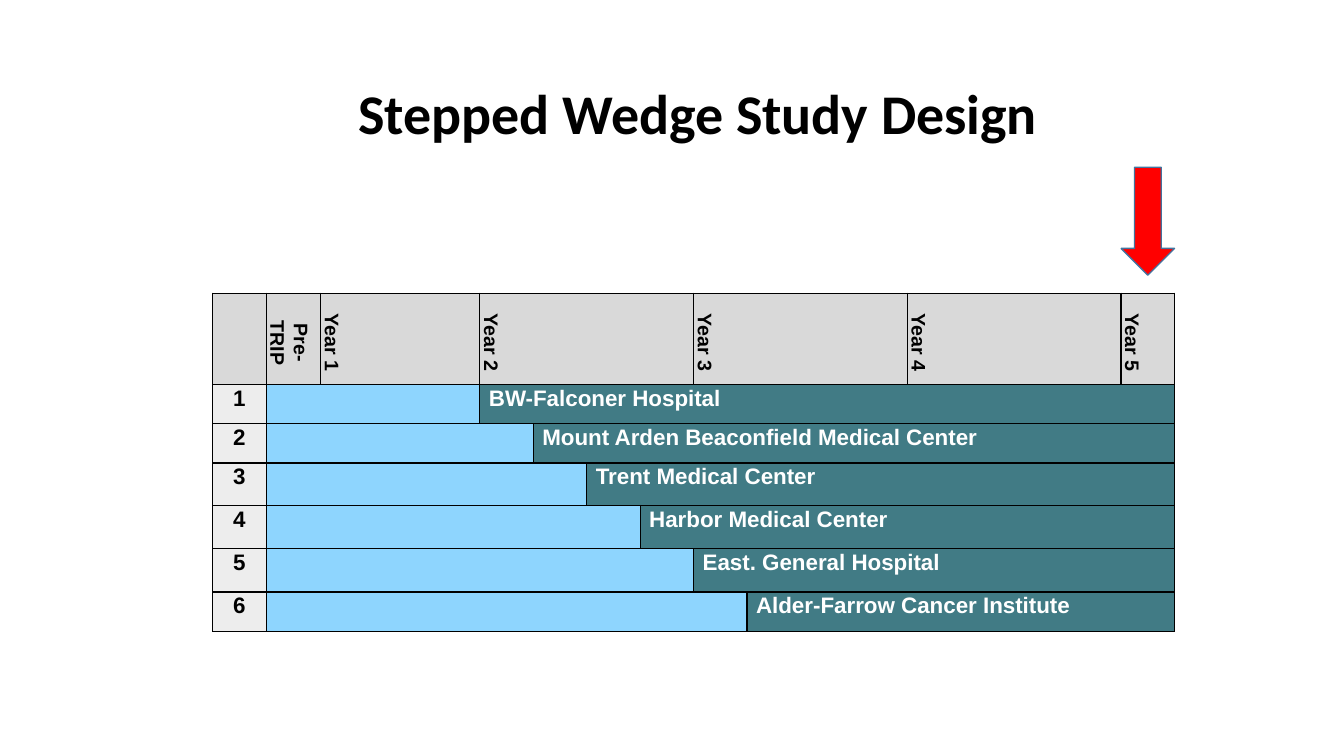
from lxml import etree
from pptx import Presentation
from pptx.dml.color import RGBColor
from pptx.enum.shapes import MSO_SHAPE
from pptx.enum.text import MSO_ANCHOR, PP_ALIGN
from pptx.oxml.ns import qn
from pptx.util import Inches, Pt

CENTER, LEFT = PP_ALIGN.CENTER, PP_ALIGN.LEFT
MIDDLE, TOP = MSO_ANCHOR.MIDDLE, MSO_ANCHOR.TOP
DOWN = MSO_SHAPE.DOWN_ARROW

HUES = {
    "ink": "000000", "paper": "FFFFFF", "head": "D9D9D9", "label": "EDEDED",
    "before": "8ED5FE", "after": "417B85", "arrow": "FF0000", "edge": "43739E",
}
WIDTHS = [0.53, 0.54, 1.58] + [0.53] * 5 + [1.59, 2.12, 0.53]
HEIGHTS = [0.78, 0.39, 0.39, 0.42, 0.43, 0.43, 0.39]
YEARS = [("", 0, 1), ("Pre-TRIP", 1, 1), ("Year 1", 2, 1), ("Year 2", 3, 4),
         ("Year 3", 7, 2), ("Year 4", 9, 1), ("Year 5", 10, 1)]
SITES = ["BW-Falconer Hospital", "Mount Arden Beaconfield Medical Center",
         "Trent Medical Center", "Harbor Medical Center",
         "East. General Hospital", "Alder-Farrow Cancer Institute"]


def write(frame, text, size, hue, align, font="Arial", lead=1.07):
    frame.text = text
    para = frame.paragraphs[0]
    para.alignment, para.line_spacing = align, lead
    look = {"name": font, "size": Pt(size), "bold": True}
    for key, value in look.items():
        setattr(para.font, key, value)
        for run in para.runs:
            setattr(run.font, key, value)
    for run in para.runs:
        run.font.color.rgb = RGBColor.from_string(HUES[hue])
    return para


def place(row, col, span, fill, anchor=TOP, left=0.06):
    cell = grid.cell(row, col)
    if span > 1:
        cell.merge(grid.cell(row, col + span - 1))
    form = {"margin_left": Inches(left), "margin_right": Inches(0.06),
            "margin_top": 0, "margin_bottom": 0, "vertical_anchor": anchor}
    for key, value in form.items():
        setattr(cell, key, value)
    for part in range(col, col + span):
        box = grid.cell(row, part)
        props = box._tc.get_or_add_tcPr()
        for side in ("lnL", "lnR", "lnT", "lnB"):
            line = etree.SubElement(props, qn("a:" + side), w=str(Pt(1)))
            paint = etree.SubElement(line, qn("a:solidFill"))
            etree.SubElement(paint, qn("a:srgbClr"), val=HUES["ink"])
        box.fill.solid()
        box.fill.fore_color.rgb = RGBColor.from_string(HUES[fill])
    return cell


deck = Presentation()
deck.slide_width, deck.slide_height = Inches(13.33), Inches(7.5)
slide = deck.slides.add_slide(deck.slide_layouts[5])

title = slide.shapes.title
spot = {"left": 2.93, "top": 0.82, "width": 7.98, "height": 0.66}
for key, value in spot.items():
    setattr(title, key, Inches(value))
title.text_frame.vertical_anchor = MIDDLE
write(title.text_frame, "Stepped Wedge Study Design", 40, "ink", CENTER, "Calibri", 0.9)

frame = slide.shapes.add_table(
    len(HEIGHTS), len(WIDTHS), Inches(2.11), Inches(2.91),
    Inches(sum(WIDTHS)), Inches(sum(HEIGHTS)))
grid = frame.table
for col, width in zip(grid.columns, WIDTHS):
    col.width = Inches(width)
for row, height in zip(grid.rows, HEIGHTS):
    row.height = Inches(height)

for text, col, span in YEARS:
    cell = place(0, col, span, "head", MIDDLE)
    if text:
        cell._tc.tcPr.set("vert", "vert")
        para = write(cell.text_frame, text, 14, "ink", CENTER)
        para._p.get_or_add_pPr().set("marL", str(Inches(0.08)))

for row, site in enumerate(SITES, 1):
    start = row + 2
    label = place(row, 0, 1, "label")
    write(label.text_frame, str(row), 16, "ink", CENTER)
    place(row, 1, start - 1, "before")
    bar = place(row, start, len(WIDTHS) - start, "after", left=0.09)
    write(bar.text_frame, site, 16, "paper", LEFT)

arrow = slide.shapes.add_shape(DOWN, Inches(11.12), Inches(1.66), Inches(0.53), Inches(1.07))
arrow.shadow.inherit = False
arrow.fill.solid()
arrow.fill.fore_color.rgb = RGBColor.from_string(HUES["arrow"])
arrow.line.color.rgb = RGBColor.from_string(HUES["edge"])
arrow.line.width = Pt(1)

deck.save("out.pptx")
